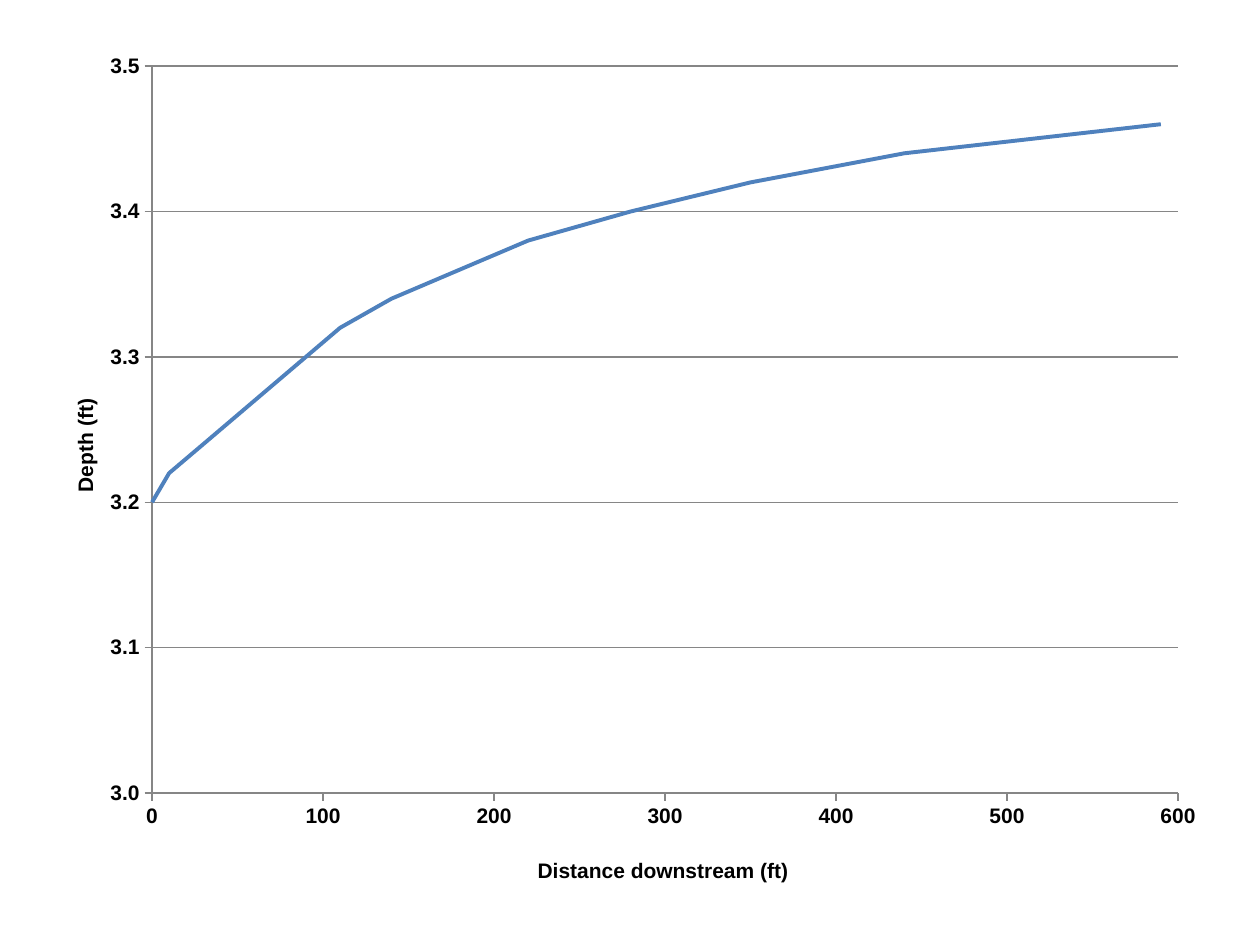
import pptx
import pptx.util
import pptx.chart.data
import pptx.dml.color
import pptx.enum.chart
import pptx.oxml
from pptx.util import Cm, Pt


def color(value):
    return pptx.dml.color.RGBColor.from_string(value)


def place(parent, index, target, **fractions):
    for old in parent.xpath("c:layout"):
        parent.remove(old)
    modes = "".join(f'<c:{name}Mode val="edge"/>' for name in "xy")
    values = "".join(f'<c:{name} val="{value}"/>' for name, value in fractions.items())
    parent.insert(index, pptx.oxml.parse_xml(
        '<c:layout xmlns:c="http://schemas.openxmlformats.org/drawingml/2006/chart">'
        f"<c:manualLayout>{target}{modes}{values}</c:manualLayout></c:layout>"))


deck = pptx.Presentation()
deck.slide_width = Cm(25.4)
deck.slide_height = Cm(19.05)
page = deck.slides.add_slide(deck.slide_layouts[6])

distances = [590, 440, 350, 280, 220, 180, 140, 110, 90, 70, 50, 30, 10, 0,
             -10, -20, -30, -40, -50, -50, -60, -70, -70, -70,
             -80, -80, -80, -80, -90, -90, -90, -90, -90, -90]
data = pptx.chart.data.XyChartData()
profile = data.add_series("Series 1")
for step, distance in enumerate(distances):
    profile.add_data_point(distance, round(3.46 - 0.02 * step, 2))

frame = page.shapes.add_chart(
    pptx.enum.chart.XL_CHART_TYPE.XY_SCATTER_SMOOTH_NO_MARKERS,
    Cm(0.66), Cm(0.81), Cm(24.05), Cm(17.45), data)
chart = frame.chart
chart.has_legend = False
chart.has_title = False
chart.font.name = "Arial"
chart.font.size = Pt(12)
chart.font.bold = True
chart.font.color.rgb = color("000000")
chart.plots[0].vary_by_categories = False

curve = chart.plots[0].series[0]
curve.smooth = True
curve.marker.style = pptx.enum.chart.XL_MARKER_STYLE.NONE
curve.format.line.color.rgb = color("4F81BD")
curve.format.line.width = Pt(2.25)

axes = [
    (chart.category_axis, "Distance downstream (ft)", 0, 600, 100, "General", 0.42, 0.94),
    (chart.value_axis, "Depth (ft)", 3, 3.5, 0.1, "#,##0.0", 0.03, 0.41),
]
for axis, title, low, high, major, number_format, left, top in axes:
    axis.minimum_scale = low
    axis.maximum_scale = high
    axis.major_unit = major
    axis.major_tick_mark = pptx.enum.chart.XL_TICK_MARK.OUTSIDE
    axis.minor_tick_mark = pptx.enum.chart.XL_TICK_MARK.NONE
    axis.has_major_gridlines = axis is chart.value_axis
    axis.tick_labels.number_format = number_format
    axis.tick_labels.number_format_is_linked = False
    axis.format.line.color.rgb = color("868686")
    axis.format.line.width = Pt(0.75)
    para = axis.axis_title.text_frame.paragraphs[0]
    para.text = title
    span = para.runs[0]
    span.font.name = "Arial"
    span.font.size = Pt(12)
    span.font.bold = True
    span.font.color.rgb = color("000000")
    place(axis.axis_title._element, 1, "", x=left, y=top)

grid = chart.value_axis.major_gridlines.format.line
grid.color.rgb = color("868686")
grid.width = Pt(0.75)

plot_area = chart._chartSpace.chart.plotArea
place(plot_area, 0, '<c:layoutTarget val="inner"/>', x=0.1, y=0.03, w=0.86, h=0.84)

deck.save("out.pptx")
